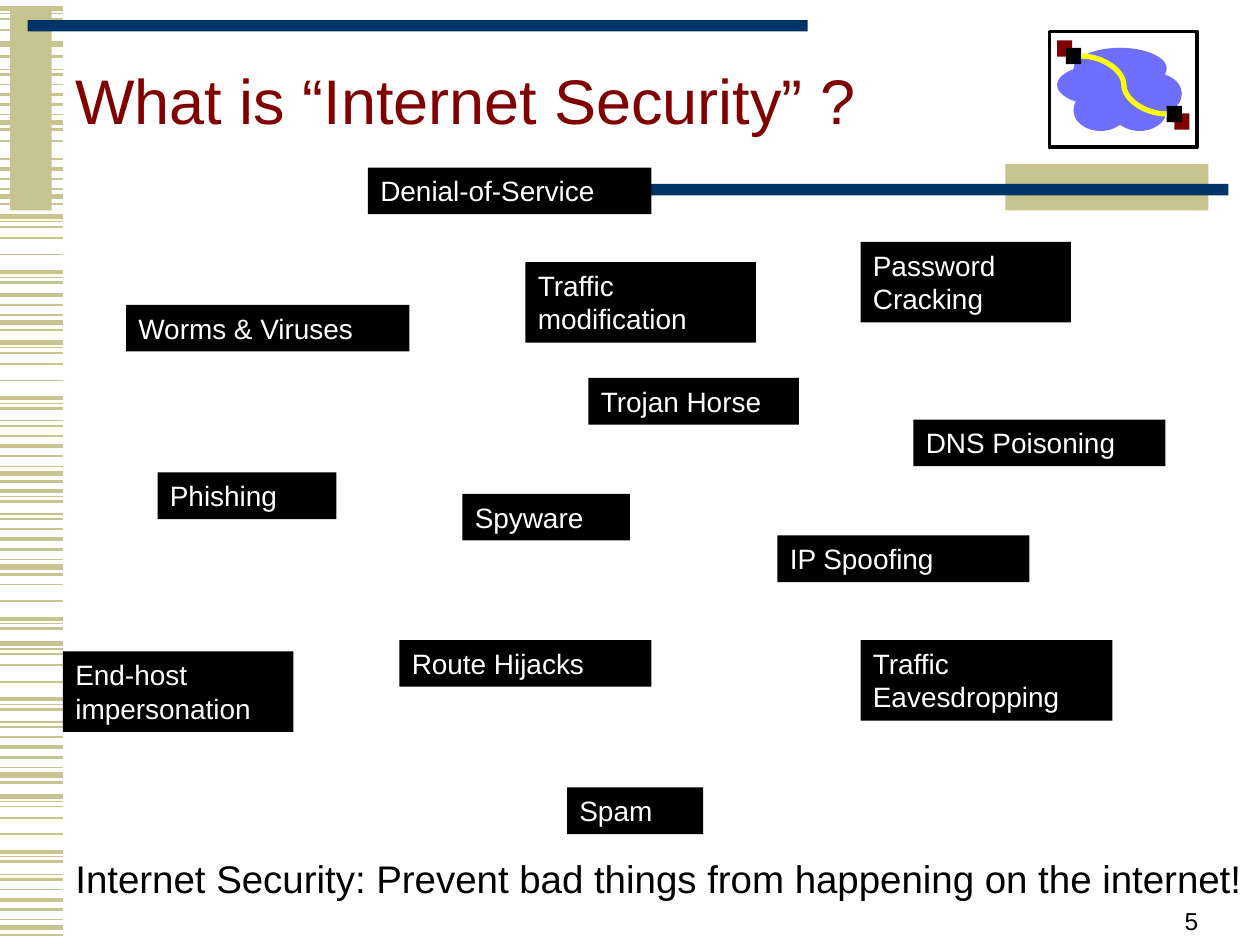
from dataclasses import dataclass

import pptx
import pptx.dml.color
import pptx.enum.shapes
import pptx.enum.text
import pptx.oxml.ns
import pptx.util
from lxml import etree

PX = 9144
FONT = "Arial"
COLORS = {
    "khaki": "C7C48F",
    "navy": "003366",
    "maroon": "800000",
    "cloud": "6F6FFF",
    "yellow": "FFFF00",
    "black": "000000",
    "white": "FFFFFF",
}
SHAPE = pptx.enum.shapes.MSO_SHAPE
CONNECTOR = pptx.enum.shapes.MSO_CONNECTOR
ANCHOR = pptx.enum.text.MSO_ANCHOR
ALIGN = pptx.enum.text.PP_ALIGN
AUTO_SIZE = pptx.enum.text.MSO_AUTO_SIZE


@dataclass(frozen=True)
class Box:
    left: int
    top: int
    width: int
    height: int

    def emu(self) -> tuple[int, ...]:
        return tuple(n * PX for n in (self.left, self.top, self.width, self.height))


@dataclass(frozen=True)
class Stripe:
    offset: int
    weight: float


@dataclass(frozen=True)
class StripeRun:
    start: int
    first: int
    stop: int


@dataclass(frozen=True)
class Threat:
    name: str
    left: int
    top: int
    width: int
    lines: int = 1


STRIPES = [
    Stripe(0, 3), Stripe(4, 0.75), Stripe(8, 1), Stripe(17, 1),
    Stripe(30, 1), Stripe(44, 2.25), Stripe(48, 0.75), Stripe(52, 1.5),
    Stripe(62, 0.75), Stripe(66, 1.5), Stripe(74, 1), Stripe(82, 2.25),
    Stripe(90, 1.5), Stripe(98, 0.75), Stripe(104, 3), Stripe(110, 1.5),
]
STRIPE_RUNS = [
    StripeRun(7, 0, 4), StripeRun(35, 0, 1), StripeRun(-7, 7, 16),
    StripeRun(82, 4, 5), StripeRun(52, 10, 16), StripeRun(172, 0, 8),
    StripeRun(152, 11, 16), StripeRun(272, 0, 16), StripeRun(346, 5, 16),
    StripeRun(447, 3, 8), StripeRun(511, 0, 16), StripeRun(632, 0, 16),
]
BARS = [
    (Box(8, 8, 33, 159), "khaki"),
    (Box(22, 16, 619, 9), "navy"),
    (Box(798, 130, 161, 37), "khaki"),
    (Box(356, 146, 619, 9), "navy"),
]
CLOUD_PUFFS = [
    Box(839, 51, 74, 33), Box(852, 38, 74, 33), Box(852, 71, 43, 33),
    Box(883, 71, 43, 33), Box(883, 58, 43, 33), Box(895, 58, 43, 33),
]
THREATS = [
    Threat("Worms & Viruses", 100, 242, 225),
    Threat("Denial-of-Service", 292, 133, 225),
    Threat("DNS Poisoning", 725, 333, 200),
    Threat("Phishing", 125, 375, 142),
    Threat("Trojan Horse", 467, 300, 167),
    Threat("Traffic Eavesdropping", 683, 508, 200, 2),
    Threat("Route Hijacks", 317, 508, 200),
    Threat("Password Cracking", 683, 192, 167, 2),
    Threat("IP Spoofing", 617, 425, 200),
    Threat("Spam", 450, 625, 108),
    Threat("Spyware", 367, 392, 133),
    Threat("Traffic modification", 417, 208, 183, 2),
    Threat("End-host impersonation", 50, 517, 183, 2),
]
THREAT_HEIGHTS = {1: 37, 2: 64}


def rgb(color: str) -> pptx.dml.color.RGBColor:
    return pptx.dml.color.RGBColor.from_string(COLORS[color])


def draw_shape(slide, box: Box, fill: str, kind=SHAPE.RECTANGLE, outline: str = ""):
    shape = slide.shapes.add_shape(kind, *box.emu())
    shape.shadow.inherit = False
    shape.fill.solid()
    shape.fill.fore_color.rgb = rgb(fill)
    if outline:
        shape.line.color.rgb = rgb(outline)
        shape.line.width = pptx.util.Pt(2.25)
    else:
        shape.line.fill.background()
    return shape


def draw_line(slide, start: tuple[int, int], end: tuple[int, int], color: str,
              weight: float, kind=CONNECTOR.STRAIGHT):
    line = slide.shapes.add_connector(kind, *(n * PX for n in start + end))
    line.line.color.rgb = rgb(color)
    line.line.width = pptx.util.Pt(weight)
    etree.SubElement(line._element.spPr, pptx.oxml.ns.qn("a:effectLst"))
    return line


def write(holder, text: str, *, size: int, color: str = "black", align=ALIGN.LEFT,
          anchor=ANCHOR.TOP, wrap: bool = True, grow: bool = False,
          spacing: float = 1.0) -> None:
    frame = holder.text_frame
    frame.word_wrap = wrap
    frame.auto_size = AUTO_SIZE.SHAPE_TO_FIT_TEXT if grow else AUTO_SIZE.NONE
    frame.vertical_anchor = anchor
    paragraph = frame.paragraphs[0]
    paragraph.alignment = align
    paragraph.line_spacing = spacing
    run = paragraph.add_run()
    run.text = text
    run.font.name = FONT
    run.font.size = pptx.util.Pt(size)
    run.font.color.rgb = rgb(color)


def draw_stripes(slide) -> None:
    for run in STRIPE_RUNS:
        for stripe in STRIPES[run.first:run.stop]:
            y = run.start + stripe.offset
            draw_line(slide, (0, y), (50, y), "khaki", stripe.weight)


def draw_emblem(slide) -> None:
    draw_shape(slide, Box(833, 25, 117, 92), "white", outline="black")
    draw_shape(slide, Box(932, 90, 12, 13), "maroon")
    for puff in CLOUD_PUFFS:
        draw_shape(slide, puff, "cloud", SHAPE.OVAL)
    draw_shape(slide, Box(839, 32, 12, 13), "maroon")
    near_host = draw_shape(slide, Box(846, 38, 12, 13), "black")
    far_host = draw_shape(slide, Box(926, 84, 12, 13), "black")
    link = draw_line(slide, (858, 45), (926, 90), "yellow", 3, CONNECTOR.CURVE)
    link.begin_connect(near_host, 3)
    link.end_connect(far_host, 1)


def draw_threat(slide, threat: Threat) -> None:
    box = Box(threat.left, threat.top, threat.width, THREAT_HEIGHTS[threat.lines])
    write(draw_shape(slide, box, "black"), threat.name, size=16, color="white", grow=True)


def main() -> None:
    deck = pptx.Presentation()
    deck.slide_width, deck.slide_height = 1000 * PX, 750 * PX
    slide = deck.slides.add_slide(deck.slide_layouts[6])
    draw_stripes(slide)
    for box, fill in BARS:
        draw_shape(slide, box, fill)
    draw_emblem(slide)
    title = slide.shapes.add_textbox(*Box(50, 17, 783, 133).emu())
    write(title, "What is “Internet Security” ?", size=36, color="maroon",
          anchor=ANCHOR.MIDDLE, spacing=0.85)
    for threat in THREATS:
        draw_threat(slide, threat)
    summary = slide.shapes.add_textbox(*Box(50, 674, 958, 47).emu())
    write(summary, "Internet Security: Prevent bad things from happening on the internet!",
          size=22, wrap=False, grow=True)
    page_number = slide.shapes.add_textbox(*Box(721, 697, 240, 50).emu())
    write(page_number, "5", size=14, align=ALIGN.RIGHT, anchor=ANCHOR.BOTTOM)
    deck.save("out.pptx")


if __name__ == "__main__":
    main()
